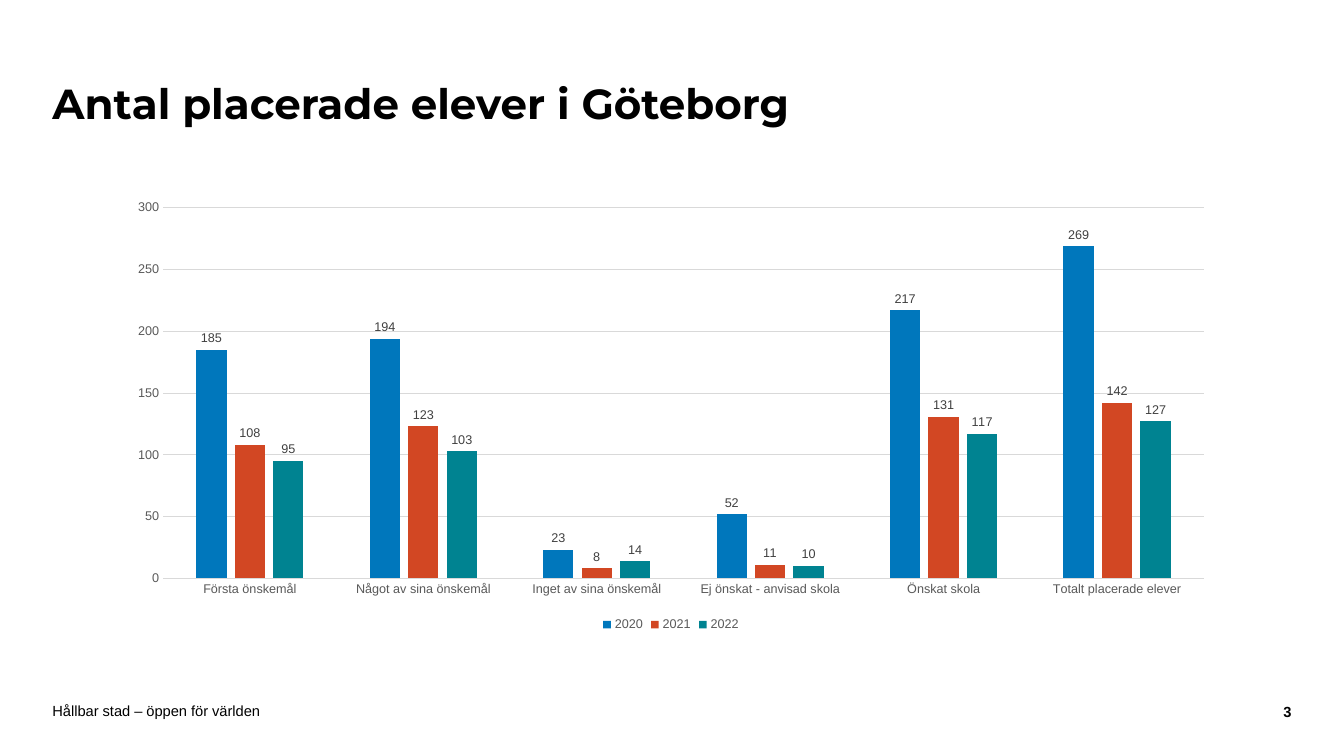
import pptx
import pptx.util
import pptx.dml.color
import pptx.chart.data
import pptx.enum.chart as enums
import pptx.enum.text as texts

Inches = pptx.util.Inches
Pt = pptx.util.Pt

# Content
TITLE = "Antal placerade elever i Göteborg"
GROUPS = ["Första önskemål", "Något av sina önskemål", "Inget av sina önskemål",
          "Ej önskat - anvisad skola", "Önskat skola", "Totalt placerade elever"]
YEARS = [
    ("2020", "0077BC", (185, 194, 23, 52, 217, 269)),
    ("2021", "D24723", (108, 123, 8, 11, 131, 142)),
    ("2022", "008391", (95, 103, 14, 10, 117, 127)),
]
LEFT, RIGHT = texts.PP_ALIGN.LEFT, texts.PP_ALIGN.RIGHT
FOOTER = [
    ("Hållbar stad – öppen för världen", (0.52, 6.97, 9.45, 0.16), LEFT, False),
    ("3", (12.17, 6.98, 0.64, 0.16), RIGHT, True),
]
BLACK, GREY, DARK, RULE = "000000", "595959", "404040", "D9D9D9"


def tint(color):
    return pptx.dml.color.RGBColor.from_string(color)


def style(font, size, color, name="Arial", bold=False):
    look = {"size": Pt(size), "name": name, "bold": bold}
    for key, value in look.items():
        setattr(font, key, value)
    font.color.rgb = tint(color)


def rule(line):
    line.color.rgb = tint(RULE)
    line.width = Pt(0.75)


def write(shape, text, align, pad=0):
    frame = shape.text_frame
    look = {"text": text, "word_wrap": True, "auto_size": texts.MSO_AUTO_SIZE.NONE,
            "vertical_anchor": texts.MSO_ANCHOR.MIDDLE,
            "margin_left": 0, "margin_right": 0,
            "margin_top": Inches(pad), "margin_bottom": Inches(pad)}
    for key, value in look.items():
        setattr(frame, key, value)
    para = frame.paragraphs[0]
    para.alignment = align
    return para


deck = pptx.Presentation()
deck.slide_width, deck.slide_height = Inches(13.33), Inches(7.5)
slide = deck.slides.add_slide(deck.slide_layouts[5])

# Title
head = slide.shapes.title
head.left, head.top, head.width, head.height = map(Inches, (0.52, 0.42, 10.03, 1.26))
para = write(head, TITLE, LEFT, 0.05)
para.line_spacing = 0.9
style(para.runs[0].font, 30, BLACK, "Montserrat", True)

# Footer and page number
for text, place, align, bold in FOOTER:
    box = slide.shapes.add_textbox(*map(Inches, place))
    para = write(box, text, align)
    style(para.runs[0].font, 10.5, BLACK, bold=bold)

# Chart
data = pptx.chart.data.CategoryChartData()
data.categories = GROUPS
for year, color, counts in YEARS:
    data.add_series(year, counts)
chart = slide.shapes.add_chart(
    enums.XL_CHART_TYPE.COLUMN_CLUSTERED,
    *map(Inches, (1.15, 1.9, 11.01, 4.41)), data).chart
style(chart.font, 10, BLACK)
chart.has_title = False
chart.has_legend = True
chart.legend.position = enums.XL_LEGEND_POSITION.BOTTOM
chart.legend.include_in_layout = False
style(chart.legend.font, 9, GREY)

# Axes
for axis in (chart.category_axis, chart.value_axis):
    axis.major_tick_mark = axis.minor_tick_mark = enums.XL_TICK_MARK.NONE
    style(axis.tick_labels.font, 9, GREY)
rule(chart.category_axis.format.line)
chart.value_axis.format.line.fill.background()
scale = {"minimum_scale": 0, "maximum_scale": 300, "major_unit": 50,
         "has_major_gridlines": True}
for key, value in scale.items():
    setattr(chart.value_axis, key, value)
rule(chart.value_axis.major_gridlines.format.line)

# Columns and their values
plot = chart.plots[0]
plot.gap_width, plot.overlap, plot.vary_by_categories = 219, -27, False
for bars, (year, color, counts) in zip(plot.series, YEARS):
    bars.format.fill.solid()
    bars.format.fill.fore_color.rgb = tint(color)
    bars.invert_if_negative = False
    marks = bars.data_labels
    marks.show_value = True
    marks.position = enums.XL_LABEL_POSITION.OUTSIDE_END
    style(marks.font, 9, DARK)

deck.save("out.pptx")
